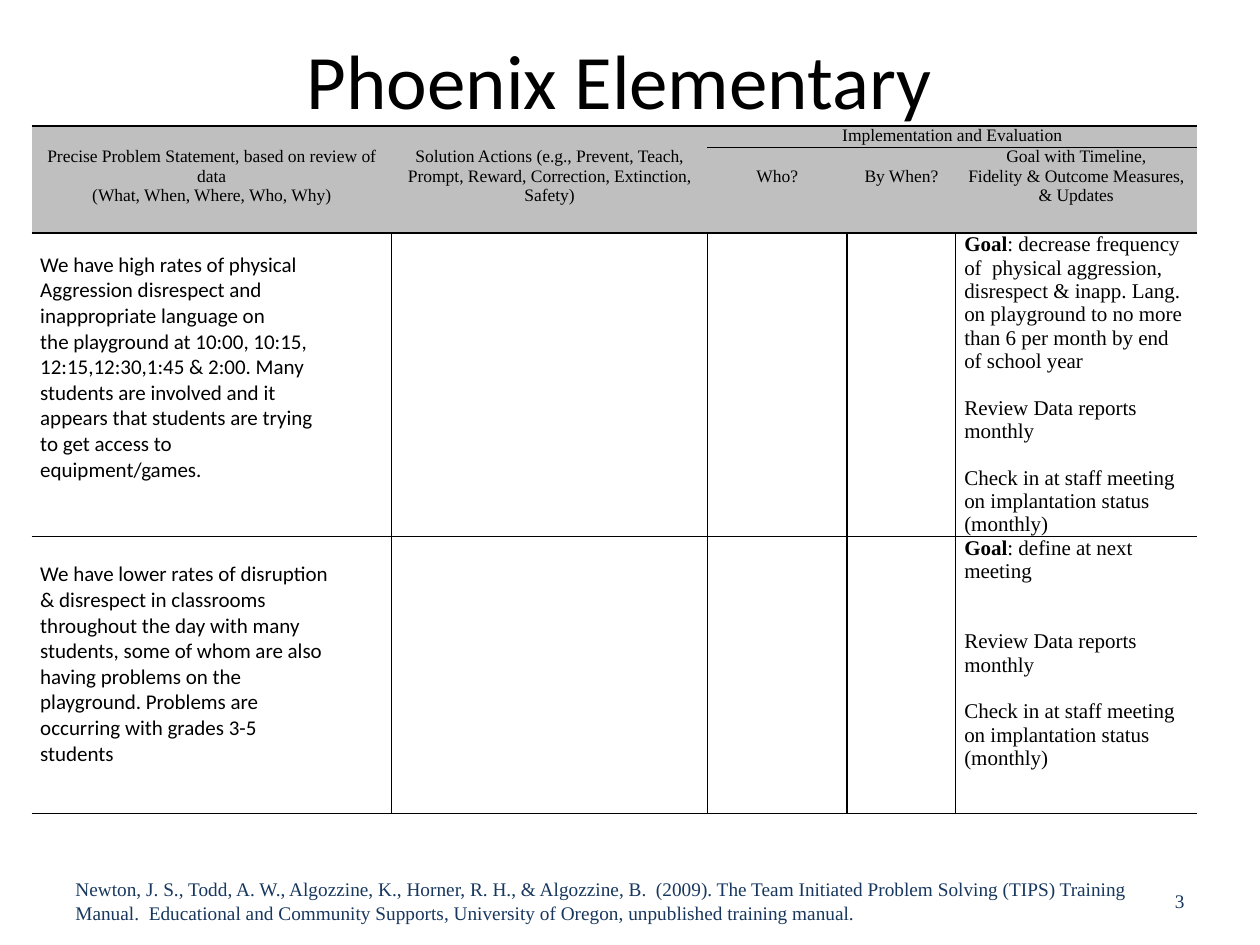
from collections import namedtuple

from lxml.etree import SubElement
from pptx import Presentation
from pptx.dml.color import RGBColor
from pptx.enum.text import MSO_ANCHOR, PP_ALIGN
from pptx.oxml.ns import qn
from pptx.util import Pt

Box = namedtuple("Box", "left top width height")

SERIF, SANS = "Times New Roman", "Calibri"
BLACK, WHITE, GREY, NAVY = "000000", "FFFFFF", "BFBFBF", "17375E"
PLAIN_TABLE_STYLE = "{2D5ABB26-0587-4C30-8999-92F81FD0307C}"

COLUMN_SHARES = [206, 180.5, 80, 62, 138]
ROW_HEIGHTS = [12.2, 49, 172.8, 158.4]
SERIF_LINE = 13.4

HEADINGS = [
    "Precise Problem Statement, based on review of data\n(What, When, Where, Who, Why)",
    "Solution Actions (e.g., Prevent, Teach, Prompt, Reward, Correction, Extinction, Safety)",
    "Who?",
    "By When?",
    "Goal with Timeline,\nFidelity & Outcome Measures, & Updates",
]
HEADING_OFFSETS = [0, 0, 11.5, 11.5, 0]

Problem = namedtuple("Problem", "statement offset goal goal_gap")
PROBLEMS = [
    Problem(
        "We have high rates of physical\nAggression disrespect and\n"
        "inappropriate language on\nthe playground at 10:00, 10:15,\n"
        "12:15,12:30,1:45 & 2:00. Many\nstudents are involved and it\n"
        "appears that students are trying\nto get access to\nequipment/games.",
        11,
        ": decrease frequency of  physical aggression, disrespect & inapp. Lang. "
        "on playground to no more than 6 per month by end of school year",
        SERIF_LINE,
    ),
    Problem(
        "We have lower rates of disruption\n& disrespect in classrooms\n"
        "throughout the day with many\nstudents, some of whom are also\n"
        "having problems on the\nplayground. Problems are\n"
        "occurring with grades 3-5\nstudents",
        14.6,
        ": define at next meeting",
        2 * SERIF_LINE,
    ),
]
REVIEW = "Review Data reports monthly"
CHECK_IN = "Check in at staff meeting on implantation status (monthly)"
CITATION = (
    "Newton, J. S., Todd, A. W., Algozzine, K., Horner, R. H., & Algozzine, B.  (2009). "
    "The Team Initiated Problem Solving (TIPS) Training Manual.  Educational and "
    "Community Supports, University of Oregon, unpublished training manual."
)


def color(hex_string):
    return RGBColor.from_string(hex_string)


def format_text(frame, size, font, hex_string, align=PP_ALIGN.LEFT):
    for paragraph in frame.paragraphs:
        paragraph.alignment = align
        for run in paragraph.runs:
            run.font.size = Pt(size)
            run.font.name = font
            run.font.color.rgb = color(hex_string)


def add_title(slide, box):
    title = slide.shapes.title
    title.left, title.top, title.width, title.height = map(Pt, box)
    title.text_frame.text = "Phoenix Elementary"
    title.text_frame.vertical_anchor = MSO_ANCHOR.MIDDLE
    format_text(title.text_frame, 44, SANS, BLACK, PP_ALIGN.CENTER)


def style_cell(cell, fill, sides):
    """Fill the cell and rule the sides named by the letters L, R, T, B."""
    properties = cell._tc.get_or_add_tcPr()
    for side in "LRTB":
        if side in sides:
            line = SubElement(properties, qn(f"a:ln{side}"), w=str(Pt(1)))
            solid = SubElement(line, qn("a:solidFill"))
            SubElement(solid, qn("a:srgbClr"), val=BLACK)
    cell.fill.solid()
    cell.fill.fore_color.rgb = color(fill)
    cell.margin_left = cell.margin_right = Pt(5)
    cell.margin_top = cell.margin_bottom = 0
    # Keeps empty cells from stretching the shallow header row
    cell.text_frame.paragraphs[0]._p.get_or_add_endParaRPr().set("sz", "1000")


def style_grid(table):
    last_column = len(table.columns) - 1
    for row_index, row in enumerate(table.rows):
        for column_index, cell in enumerate(row.cells):
            if row_index == 0:
                style_cell(cell, GREY, "TB" if column_index >= 2 else "T")
            elif row_index == 1:
                style_cell(cell, GREY, "TB" if column_index >= 2 else "B")
            else:
                left = "L" if column_index > 0 else ""
                right = "R" if column_index < last_column else ""
                style_cell(cell, WHITE, left + right + "TB")


def fill_header(table):
    evaluation = table.cell(0, 2)
    evaluation.merge(table.cell(0, 4))
    evaluation.text_frame.text = "Implementation and Evaluation"
    format_text(evaluation.text_frame, 10, SERIF, BLACK, PP_ALIGN.CENTER)
    for column, (heading, offset) in enumerate(zip(HEADINGS, HEADING_OFFSETS)):
        cell = table.cell(1, column)
        cell.margin_top = Pt(offset)
        cell.text_frame.text = heading
        format_text(cell.text_frame, 10, SERIF, BLACK, PP_ALIGN.CENTER)


def fill_problem(row, problem):
    statement, goal = row.cells[0], row.cells[len(row.cells) - 1]
    statement.margin_top = Pt(problem.offset)
    statement.text_frame.text = problem.statement
    format_text(statement.text_frame, 12, SANS, BLACK)

    frame = goal.text_frame
    frame.text = "\n".join(["Goal", REVIEW, CHECK_IN])
    goal_line, review_line, check_in_line = frame.paragraphs
    goal_line.runs[0].font.bold = True
    goal_line.add_run().text = problem.goal
    review_line.space_before = Pt(problem.goal_gap)
    check_in_line.space_before = Pt(SERIF_LINE)
    format_text(frame, 12, SERIF, BLACK)


def add_action_plan(slide, box):
    table = slide.shapes.add_table(
        len(ROW_HEIGHTS), len(COLUMN_SHARES), *map(Pt, box)
    ).table
    table.first_row = table.horz_banding = False
    table._tbl.tblPr.find(qn("a:tableStyleId")).text = PLAIN_TABLE_STYLE
    for column, share in zip(table.columns, COLUMN_SHARES):
        column.width = Pt(box.width * share / sum(COLUMN_SHARES))
    for row, height in zip(table.rows, ROW_HEIGHTS):
        row.height = Pt(height)
    style_grid(table)
    fill_header(table)
    for row, problem in zip(list(table.rows)[2:], PROBLEMS):
        fill_problem(row, problem)


def add_footer_text(slide, box, text, align):
    frame = slide.shapes.add_textbox(*map(Pt, box)).text_frame
    frame.word_wrap = True
    frame.vertical_anchor = MSO_ANCHOR.MIDDLE
    frame.text = text
    format_text(frame, 11, SERIF, NAVY, align)


def add_footer(slide, box):
    number_width, citation_width = 168, 624
    number_box = box._replace(
        left=box.left + box.width - number_width, width=number_width
    )
    add_footer_text(slide, number_box, "3", PP_ALIGN.RIGHT)
    add_footer_text(slide, box._replace(width=citation_width), CITATION, PP_ALIGN.LEFT)


def main():
    presentation = Presentation()
    presentation.slide_width, presentation.slide_height = Pt(720), Pt(540)
    slide = presentation.slides.add_slide(presentation.slide_layouts[5])
    add_title(slide, Box(30, 0, 648, 90))
    add_action_plan(slide, Box(18, 72, 666, sum(ROW_HEIGHTS)))
    add_footer(slide, Box(36, 500.5, 648, 28.5))
    presentation.save("out.pptx")


if __name__ == "__main__":
    main()
